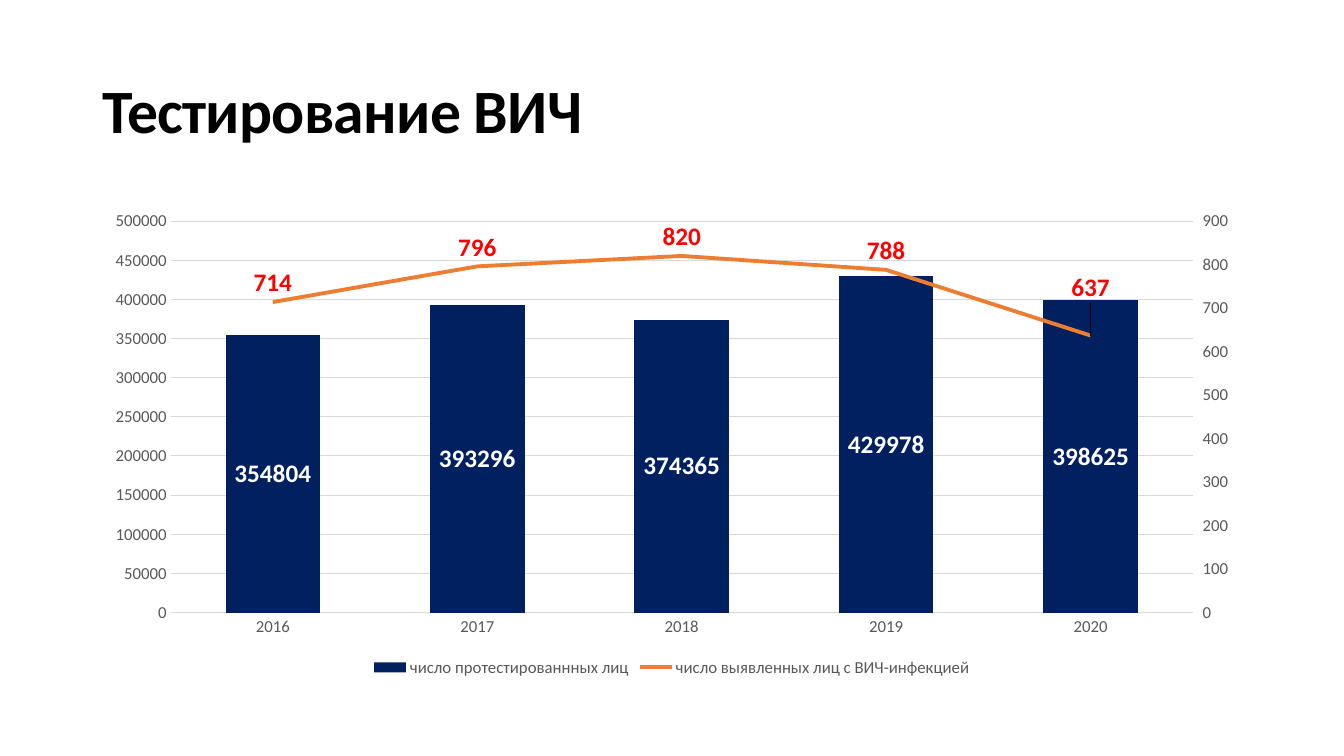
"""Build a slide with a combined column and line chart about HIV testing."""
import copy

import pptx
import pptx.chart.data
import pptx.dml.color
import pptx.enum.chart
import pptx.enum.text
import pptx.oxml
import pptx.oxml.ns
import pptx.util

Pt = pptx.util.Pt
COLORS = {
    "title": "000000",
    "axis_text": "595959",
    "grid": "D9D9D9",
    "tested": "002060",
    "detected": "ED7D31",
    "tested_label": "FFFFFF",
    "detected_label": "FF0000",
}
YEARS = ["2016", "2017", "2018", "2019", "2020"]
TESTED = ("число протестированнных лиц", [354804, 393296, 374365, 429978, 398625])
DETECTED = ("число выявленных лиц с ВИЧ-инфекцией", [714, 796, 820, 788, 637])


def color(name):
    """Return the named colour."""
    return pptx.dml.color.RGBColor.from_string(COLORS[name])


def format_font(font, size, color_name, bold=False):
    """Apply size, colour and weight to a font."""
    font.name = "Calibri"
    font.size = Pt(size)
    font.bold = bold
    font.color.rgb = color(color_name)


def add_text(text_frame, text, size, color_name, bold=False, line_spacing=1.0, tracking=0):
    """Write one formatted paragraph into a text frame."""
    paragraph = text_frame.paragraphs[0]
    paragraph.line_spacing = line_spacing
    run = paragraph.add_run()
    run.text = text
    format_font(run.font, size, color_name, bold)
    run._r.get_or_add_rPr().set("spc", str(round(tracking * 100)))


def set_value(parent, tag, value):
    """Set the val attribute of a child element."""
    parent.find(pptx.oxml.ns.qn(tag)).set("val", str(value))


class SlideBuilder:
    """Hold the current slide and the shared chart style."""

    axis_size = 12
    label_size = 18

    def __init__(self, slide):
        """Remember the slide."""
        self.slide = slide

    def title(self, text, left, top, width, height):
        """Add the slide title."""
        shape = self.slide.shapes.add_textbox(Pt(left), Pt(top), Pt(width), Pt(height))
        shape.text_frame.word_wrap = True
        shape.text_frame.vertical_anchor = pptx.enum.text.MSO_ANCHOR.MIDDLE
        add_text(shape.text_frame, text, 44, "title", bold=True, line_spacing=0.9, tracking=-0.5)

    def combined_chart(self, left, top, width, height):
        """Add columns on the left axis and a line on the right axis."""
        data = pptx.chart.data.CategoryChartData()
        data.categories = YEARS
        for name, values in (TESTED, DETECTED):
            data.add_series(name, values)
        chart = self.slide.shapes.add_chart(
            pptx.enum.chart.XL_CHART_TYPE.COLUMN_CLUSTERED,
            Pt(left), Pt(top), Pt(width), Pt(height), data,
        ).chart
        chart.has_title = False
        format_font(chart.font, self.axis_size, "axis_text")
        chart.has_legend = True
        chart.legend.position = pptx.enum.chart.XL_LEGEND_POSITION.BOTTOM
        chart.legend.include_in_layout = False
        format_font(chart.legend.font, self.axis_size, "axis_text")
        self.axes(chart)
        self.move_line_to_right_axis(chart)
        self.series(chart)

    def axes(self, chart):
        """Style the category axis and the left value axis."""
        for axis in (chart.category_axis, chart.value_axis):
            axis.major_tick_mark = pptx.enum.chart.XL_TICK_MARK.NONE
            axis.minor_tick_mark = pptx.enum.chart.XL_TICK_MARK.NONE
            format_font(axis.tick_labels.font, self.axis_size, "axis_text")
        chart.category_axis.format.line.color.rgb = color("grid")
        chart.category_axis.format.line.width = Pt(1)
        value_axis = chart.value_axis
        value_axis.minimum_scale = 0
        value_axis.maximum_scale = 500000
        value_axis.major_unit = 50000
        value_axis.format.line.fill.background()
        grid = value_axis.major_gridlines.format.line
        grid.color.rgb = color("grid")
        grid.width = Pt(0.75)

    def move_line_to_right_axis(self, chart):
        """Turn the second series into a line with its own axes."""
        qn = pptx.oxml.ns.qn
        plot_area = chart.element.xpath("c:chart/c:plotArea")[0]
        bar_chart = plot_area.find(qn("c:barChart"))
        line_series = bar_chart.findall(qn("c:ser"))[1]
        for inversion in line_series.findall(qn("c:invertIfNegative")):
            line_series.remove(inversion)
        line_chart = pptx.oxml.parse_xml(
            f'<c:lineChart {pptx.oxml.ns.nsdecls("c")}><c:grouping val="standard"/>'
            '<c:varyColors val="0"/><c:marker val="1"/>'
            '<c:axId val="5001"/><c:axId val="5002"/></c:lineChart>'
        )
        line_chart.insert(2, line_series)
        bar_chart.addnext(line_chart)

        value_axis = plot_area.find(qn("c:valAx"))
        right_axis = copy.deepcopy(value_axis)
        right_axis.remove(right_axis.find(qn("c:majorGridlines")))
        hidden_axis = copy.deepcopy(plot_area.find(qn("c:catAx")))
        for axis, own, other in ((right_axis, 5002, 5001), (hidden_axis, 5001, 5002)):
            set_value(axis, "c:axId", own)
            set_value(axis, "c:crossAx", other)
        set_value(right_axis, "c:axPos", "r")
        set_value(right_axis, "c:crosses", "max")
        set_value(right_axis, "c:majorTickMark", "out")
        set_value(right_axis, "c:majorUnit", 100)
        set_value(right_axis.find(qn("c:scaling")), "c:max", 900)
        set_value(hidden_axis, "c:delete", 1)
        value_axis.addnext(right_axis)
        right_axis.addnext(hidden_axis)

    def series(self, chart):
        """Style the columns, the line and their labels."""
        positions = pptx.enum.chart.XL_LABEL_POSITION
        columns, line = chart.plots
        columns.gap_width = 116
        columns.vary_by_categories = False
        tested, detected = columns.series[0], line.series[0]
        tested.format.fill.solid()
        tested.format.fill.fore_color.rgb = color("tested")
        detected.format.line.color.rgb = color("detected")
        detected.format.line.width = Pt(2.75)
        detected.marker.style = pptx.enum.chart.XL_MARKER_STYLE.NONE
        detected.smooth = False
        self.labels(tested.data_labels, "tested_label", positions.CENTER)
        self.labels(detected.data_labels, "detected_label", positions.ABOVE)
        last_label = detected.points[len(YEARS) - 1].data_label
        format_font(last_label.font, self.label_size, "detected_label", bold=True)
        last_label.position = positions.ABOVE
        index = chart.element.xpath(".//c:lineChart//c:dLbl/c:idx")[0]
        index.addnext(pptx.oxml.parse_xml(
            f'<c:layout {pptx.oxml.ns.nsdecls("c")}><c:manualLayout>'
            '<c:x val="0"/><c:y val="-0.06"/></c:manualLayout></c:layout>'
        ))

    def labels(self, data_labels, color_name, position):
        """Show the values of a series."""
        data_labels.show_value = True
        data_labels.position = position
        format_font(data_labels.font, self.label_size, color_name, bold=True)


def main():
    """Create and save the presentation."""
    presentation = pptx.Presentation()
    presentation.slide_width = Pt(960)
    presentation.slide_height = Pt(540)
    builder = SlideBuilder(presentation.slides.add_slide(presentation.slide_layouts[6]))
    builder.title("Тестирование ВИЧ", 66, 28.8, 828, 104.4)
    builder.combined_chart(66, 144, 828, 342.7)
    presentation.save("out.pptx")


if __name__ == "__main__":
    main()
